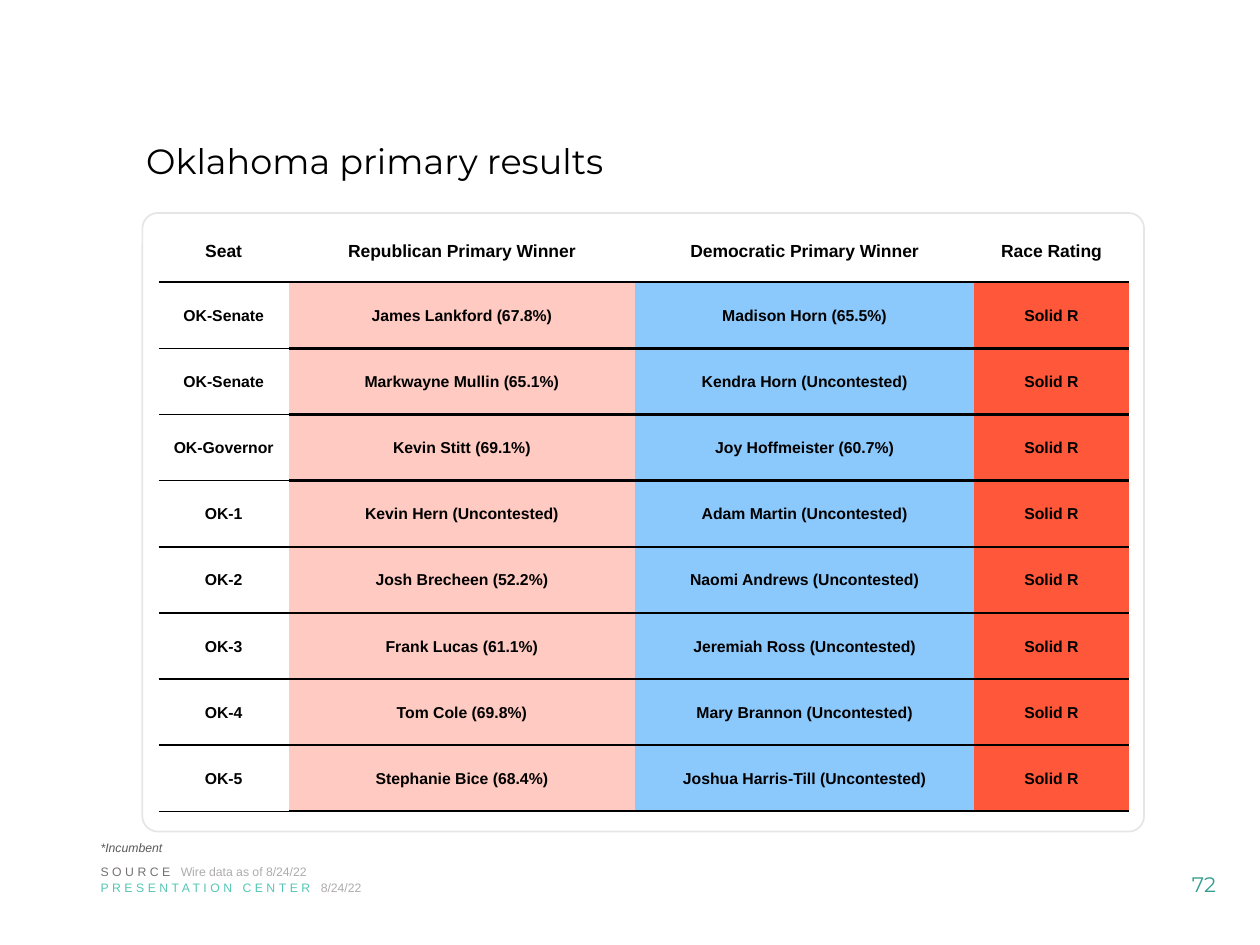
from dataclasses import dataclass
from typing import Optional

from lxml.etree import SubElement
from pptx import Presentation
from pptx.dml.color import RGBColor
from pptx.enum.shapes import MSO_SHAPE
from pptx.enum.text import MSO_ANCHOR, PP_ALIGN
from pptx.oxml.ns import qn
from pptx.util import Inches, Pt

COLORS = {
    "ink": "000000", "paper": "FFFFFF", "frame": "E7E6E6",
    "republican": "FFCAC1", "democratic": "8BC9FD", "solid_r": "FF5739",
    "teal": "55C6B5", "page": "359F8F",
    "label": "767171", "detail": "AFABAB", "note": "595959",
}
SLIDE_WIDTH, SLIDE_HEIGHT = Inches(10), Inches(7.5)
UNIT = SLIDE_WIDTH // 100  # the slide is a grid of 100 columns and 75 rows


@dataclass(frozen=True)
class Area:
    """Position and size in grid columns and rows."""
    column: float
    row: float
    columns: float
    rows: float

    def lengths(self) -> tuple:
        return tuple(round(n * UNIT) for n in (self.column, self.row, self.columns, self.rows))


@dataclass(frozen=True)
class Words:
    text: str
    color: str
    size: float = 7
    font: str = "Arial"
    bold: bool = False
    italic: bool = False
    spacing: float = 0


@dataclass(frozen=True)
class Column:
    heading: str
    width: float
    fill: Optional[str]
    rule: float


@dataclass(frozen=True)
class Race:
    seat: str
    republican: str
    democrat: str
    rating: str = "Solid R"


COLUMNS = [
    Column("Seat", 10.3, None, 1),
    Column("Republican Primary Winner", 27.5, "republican", 1.5),
    Column("Democratic Primary Winner", 26.9, "democratic", 1.5),
    Column("Race Rating", 12.3, "solid_r", 1.5),
]
RACES = [
    Race("OK-Senate", "James Lankford (67.8%)", "Madison Horn (65.5%)"),
    Race("OK-Senate", "Markwayne Mullin (65.1%)", "Kendra Horn (Uncontested)"),
    Race("OK-Governor", "Kevin Stitt (69.1%)", "Joy Hoffmeister (60.7%)"),
    Race("OK-1", "Kevin Hern (Uncontested)", "Adam Martin (Uncontested)"),
    Race("OK-2", "Josh Brecheen (52.2%)", "Naomi Andrews (Uncontested)"),
    Race("OK-3", "Frank Lucas (61.1%)", "Jeremiah Ross (Uncontested)"),
    Race("OK-4", "Tom Cole (69.8%)", "Mary Brannon (Uncontested)"),
    Race("OK-5", "Stephanie Bice (68.4%)", "Joshua Harris-Till (Uncontested)"),
]
RESULTS = Area(12.6, 17.4, 76.9, 47)
HEADER_ROWS = 5
FOOTERS = [
    (Area(7, 69.4, 29.4, 2.2), [Words("PRESENTATION CENTER ", "teal", spacing=2),
                                Words("8/24/22", "detail")]),
    (Area(7, 68.1, 39.9, 2.2), [Words("SOURCE ", "label", spacing=2),
                                Words("Wire data as of 8/24/22", "detail")]),
    (Area(7, 66.2, 90.2, 2.2), [Words("*Incumbent", "note", italic=True)]),
]


def rgb(name: str) -> RGBColor:
    return RGBColor.from_string(COLORS[name])


def write(frame, pieces: list, align=PP_ALIGN.LEFT, anchor=MSO_ANCHOR.TOP) -> None:
    frame.word_wrap = True
    frame.vertical_anchor = anchor
    paragraph = frame.paragraphs[0]
    paragraph.alignment = align
    for words in pieces:
        run = paragraph.add_run()
        run.text = words.text
        run.font.name = words.font
        run.font.size = Pt(words.size)
        run.font.bold = words.bold
        run.font.italic = words.italic
        run.font.color.rgb = rgb(words.color)
        if words.spacing:
            run.font._element.set("spc", str(int(words.spacing * 100)))


def add_text(slide, area: Area, pieces: list, **placing) -> None:
    write(slide.shapes.add_textbox(*area.lengths()).text_frame, pieces, **placing)


def add_title(slide) -> None:
    title = slide.shapes.title
    title.left, title.top, title.width, title.height = Area(10.6, 9, 80.3, 7.9).lengths()
    write(title.text_frame, [Words("Oklahoma primary results", "ink", 20, "Montserrat")],
          anchor=MSO_ANCHOR.MIDDLE)
    title.text_frame.paragraphs[0].line_spacing = 0.9


def add_card(slide) -> None:
    card = slide.shapes.add_shape(MSO_SHAPE.ROUNDED_RECTANGLE, *Area(11.3, 16.9, 79.5, 49.1).lengths())
    card.adjustments[0] = 0.025
    card.shadow.inherit = False
    card.fill.solid()
    card.fill.fore_color.rgb = rgb("paper")
    card.line.color.rgb = rgb("frame")
    card.line.width = Pt(1)


def set_borders(cell, top: float, bottom: float) -> None:
    """Rule a cell above and below, in points; zero means no line."""
    properties = cell._tc.get_or_add_tcPr()
    for index, (edge, points) in enumerate([("L", 0), ("R", 0), ("T", top), ("B", bottom)]):
        line = SubElement(properties, qn(f"a:ln{edge}"), w=str(int(Pt(points))))
        if points:
            fill = SubElement(line, qn("a:solidFill"))
            SubElement(fill, qn("a:srgbClr"), val=COLORS["ink"])
        else:
            SubElement(line, qn("a:noFill"))
        properties.insert(index, line)


def fill_cell(cell, words: Words, fill: Optional[str], top: float, bottom: float) -> None:
    cell.margin_left = cell.margin_right = cell.margin_top = Inches(0.01)
    cell.margin_bottom = 0
    cell.vertical_anchor = MSO_ANCHOR.MIDDLE
    paragraph_frame = cell.text_frame
    write(paragraph_frame, [words], PP_ALIGN.CENTER, MSO_ANCHOR.MIDDLE)
    if fill:
        cell.fill.solid()
        cell.fill.fore_color.rgb = rgb(fill)
    else:
        cell.fill.background()
    set_borders(cell, top, bottom)


def add_results(slide) -> None:
    table = slide.shapes.add_table(len(RACES) + 1, len(COLUMNS), *RESULTS.lengths()).table
    table.horz_banding = False
    table.rows[0].height = HEADER_ROWS * UNIT
    for row in list(table.rows)[1:]:
        row.height = round((RESULTS.rows - HEADER_ROWS) * UNIT / len(RACES))
    for c, column in enumerate(COLUMNS):
        table.columns[c].width = round(column.width * UNIT)
        fill_cell(table.cell(0, c), Words(column.heading, "ink", 10, bold=True), None, 0, 1.5)
        for r, race in enumerate(RACES, start=1):
            entry = (race.seat, race.republican, race.democrat, race.rating)[c]
            fill_cell(table.cell(r, c), Words(entry, "ink", 9, bold=True), column.fill,
                      1.5 if r == 1 else column.rule, column.rule)


def main() -> None:
    presentation = Presentation()
    presentation.slide_width, presentation.slide_height = SLIDE_WIDTH, SLIDE_HEIGHT
    slide = presentation.slides.add_slide(presentation.slide_layouts[5])
    add_text(slide, Area(91.1, 68.2, 8.9, 4), [Words("72", "page", 12, "Montserrat")],
             align=PP_ALIGN.CENTER, anchor=MSO_ANCHOR.MIDDLE)
    add_title(slide)
    add_card(slide)
    for area, pieces in FOOTERS:
        add_text(slide, area, pieces)
    add_results(slide)
    presentation.save("out.pptx")


if __name__ == "__main__":
    main()
